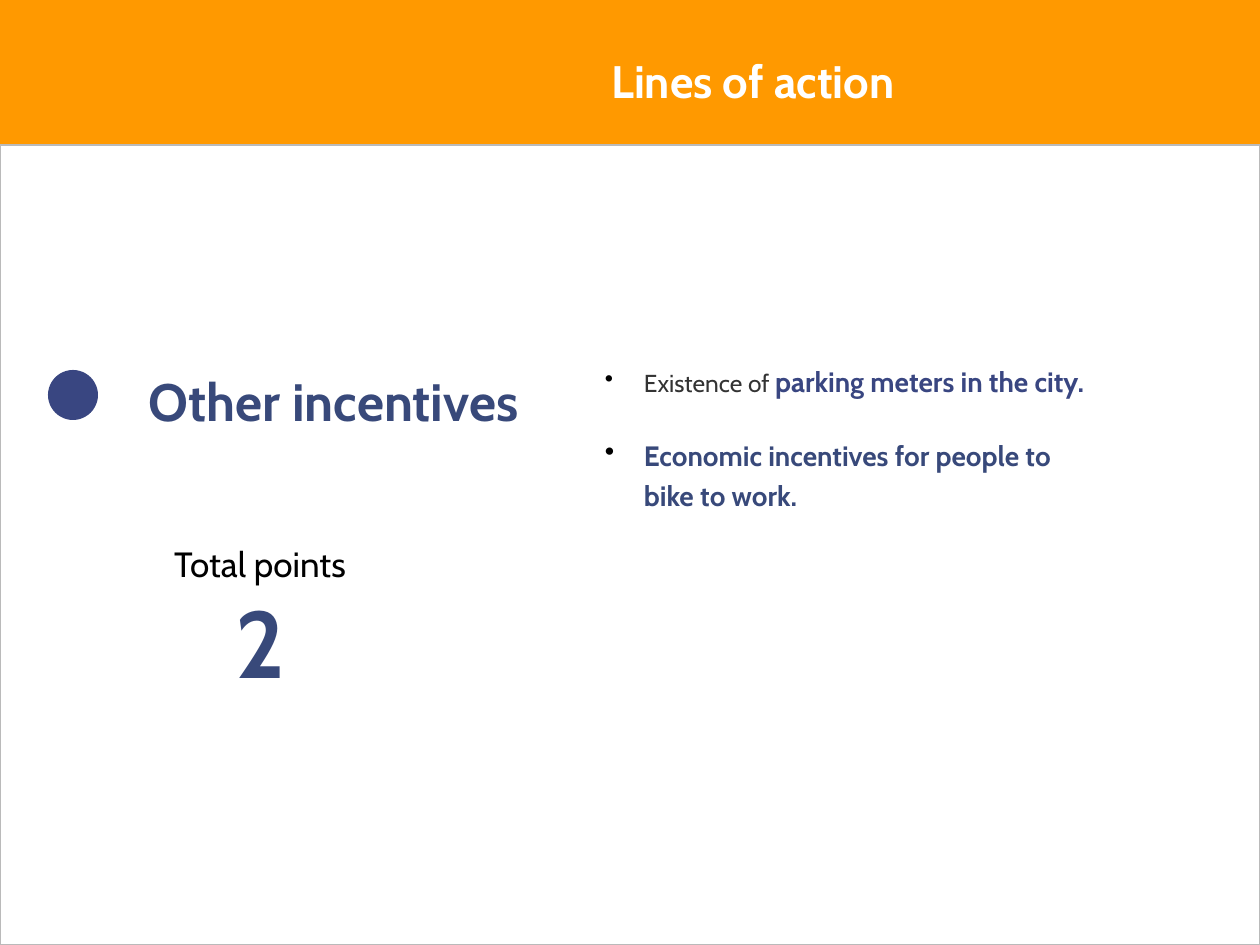
from lxml import etree
from pptx import Presentation
from pptx.dml.color import RGBColor
from pptx.enum.shapes import MSO_SHAPE
from pptx.enum.text import PP_ALIGN
from pptx.oxml.ns import qn
from pptx.util import Pt

EMU_PER_PX = 914400 / 126
SLIDE_SIZE = (1260, 945)
FONT = "Cabin"
COLORS = {"orange": "FF9900", "white": "FFFFFF", "border": "BABABA", "indigo": "394681",
          "blue": "38497A", "gray": "333333", "black": "000000"}

# Preset, box (left, top, width, height), fill, line
SHAPES = [
    (MSO_SHAPE.RECTANGLE, (0, -4, 1260, 949), "orange", None),
    (MSO_SHAPE.RECTANGLE, (0, 145, 1260, 800), "white", "border"),
    (MSO_SHAPE.OVAL, (48, 370, 50, 50), "indigo", None),
]

# Each paragraph is a list of runs: text, size, color, bold
TEXTS = [
    {"box": (592, 352, 630, 251), "margin": 6, "bullets": True,
     "paragraph": {"line_spacing": 1.2},
     "paragraphs": [
         [("Existence of ", 14, "gray", False),
          ("parking meters in the city.", 16, "indigo", True)],
         [("Economic incentives for people to\vbike to work.", 16, "blue", True)]]},
    {"box": (246, 47, 1014, 68), "margin": 6,
     "paragraph": {"alignment": PP_ALIGN.CENTER},
     "paragraphs": [[("Lines of action", 26, "white", True)]]},
    {"box": (136, 343, 402, 156), "margin": 13,
     "paragraph": {"line_spacing": 1.2},
     "paragraphs": [[("Other incentives", 30, "blue", True)]]},
    {"box": (117, 536, 286, 170), "margin": 6,
     "paragraph": {"alignment": PP_ALIGN.CENTER},
     "paragraphs": [[("Total points", 20, "black", False)],
                    [("2", 54, "blue", True)]]},
]
BULLET_INDENT = 39
BULLET_GAP = Pt(19)


def px(length):
    return round(length * EMU_PER_PX)


def rgb(name):
    return RGBColor.from_string(COLORS[name])


def add_shape(slide, preset, box, fill, line):
    shape = slide.shapes.add_shape(preset, *map(px, box))
    shape.shadow.inherit = False
    shape.fill.solid()
    shape.fill.fore_color.rgb = rgb(fill)
    if line:
        shape.line.color.rgb = rgb(line)
        shape.line.width = Pt(1)
    else:
        shape.line.fill.background()


def add_bullet(paragraph):
    properties = paragraph._p.get_or_add_pPr()
    properties.set("marL", str(px(BULLET_INDENT)))
    properties.set("indent", str(-px(BULLET_INDENT)))
    color = etree.SubElement(properties, qn("a:buClr"))
    etree.SubElement(color, qn("a:srgbClr"), val=COLORS["black"])
    etree.SubElement(properties, qn("a:buChar"), char="•")


def add_run(paragraph, text, size, color, bold):
    for index, line in enumerate(text.split("\v")):
        if index:
            paragraph.add_line_break()
        run = paragraph.add_run()
        run.text = line
        for name, value in {"name": FONT, "size": Pt(size), "bold": bold}.items():
            setattr(run.font, name, value)
        run.font.color.rgb = rgb(color)


def add_text(slide, content):
    frame = slide.shapes.add_textbox(*map(px, content["box"])).text_frame
    frame.word_wrap = True
    frame.margin_left = frame.margin_right = px(13)
    frame.margin_top = frame.margin_bottom = px(content["margin"])
    for index, runs in enumerate(content["paragraphs"]):
        paragraph = frame.add_paragraph() if index else frame.paragraphs[0]
        if content.get("bullets"):
            add_bullet(paragraph)
            if index:
                paragraph.space_before = BULLET_GAP
        for name, value in content["paragraph"].items():
            setattr(paragraph, name, value)
        for run in runs:
            add_run(paragraph, *run)


def main():
    presentation = Presentation()
    presentation.slide_width, presentation.slide_height = map(px, SLIDE_SIZE)
    slide = presentation.slides.add_slide(presentation.slide_layouts[6])
    for shape in SHAPES:
        add_shape(slide, *shape)
    for content in TEXTS:
        add_text(slide, content)
    presentation.save("out.pptx")


if __name__ == "__main__":
    main()
